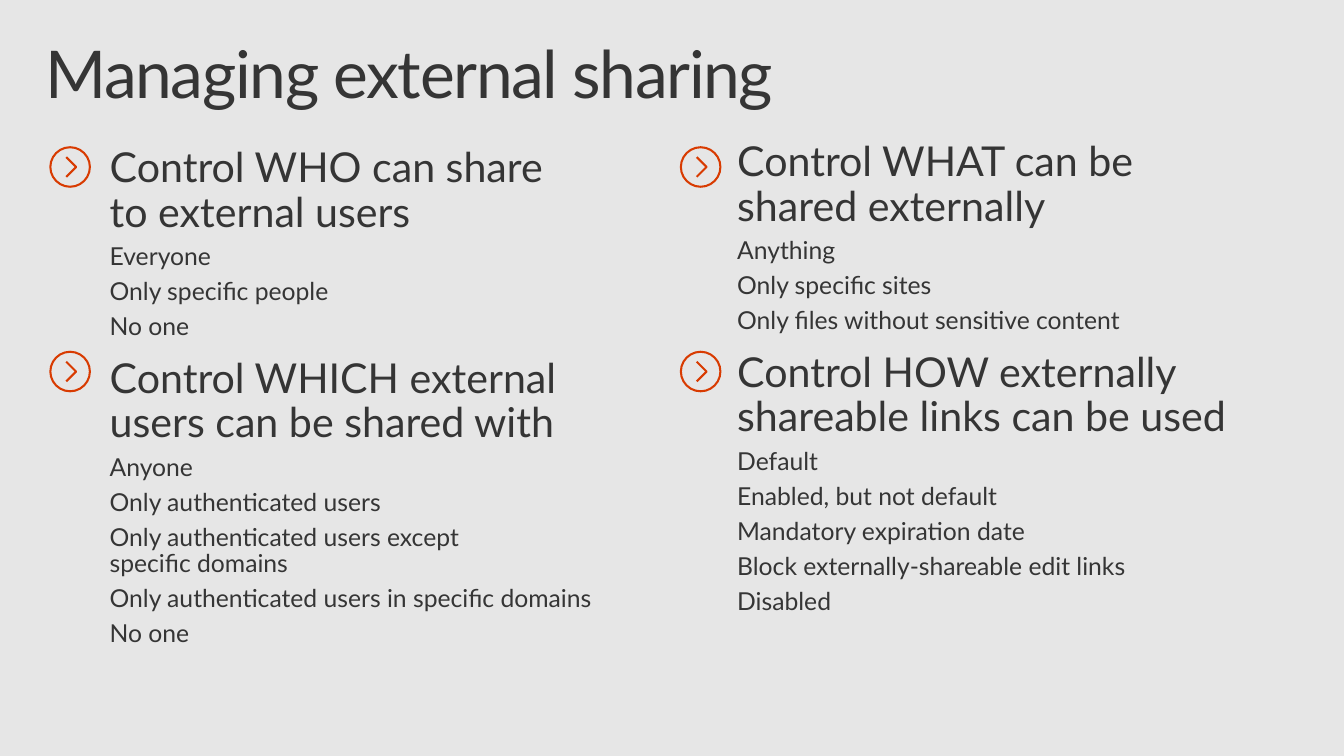
from pptx import Presentation
from pptx.dml.color import RGBColor
from pptx.enum.shapes import MSO_SHAPE
from pptx.enum.text import MSO_ANCHOR
from pptx.util import Inches, Pt

BACKGROUND = RGBColor(0xE6, 0xE6, 0xE6)
INK = RGBColor(0x35, 0x35, 0x35)
ACCENT = RGBColor(0xD8, 0x3B, 0x01)

WHO_AND_WHICH = [
    ("Control WHO can share\nto external users",
     ["Everyone", "Only specific people", "No one"]),
    ("Control WHICH external users can be shared with",
     ["Anyone", "Only authenticated users",
      "Only authenticated users except\nspecific domains",
      "Only authenticated users in specific domains", "No one"]),
]
WHAT_AND_HOW = [
    ("Control WHAT can be\nshared externally",
     ["Anything", "Only specific sites", "Only files without sensitive content"]),
    ("Control HOW externally shareable links can be used",
     ["Default", "Enabled, but not default", "Mandatory expiration date",
      "Block externally-shareable edit links", "Disabled"]),
]


class SharingSlide:
    font_name = "Lato"
    title_size, heading_size, option_size = 48, 30, 18
    icon_size = 0.4

    def __init__(self, deck):
        self.page = deck.slides.add_slide(deck.slide_layouts[6])
        self.page.background.fill.solid()
        self.page.background.fill.fore_color.rgb = BACKGROUND

    def text_frame(self, left, top, width, height, inset_x=0.16, inset_y=0.1):
        box = self.page.shapes.add_textbox(
            Inches(left), Inches(top), Inches(width), Inches(height))
        frame = box.text_frame
        frame.word_wrap = True
        frame.vertical_anchor = MSO_ANCHOR.TOP
        frame.margin_left = frame.margin_right = Inches(inset_x)
        frame.margin_top = frame.margin_bottom = Inches(inset_y)
        return frame

    def paragraph(self, frame, text, size, space_before=0, level=0):
        """Fill the empty first paragraph, or add one below the others."""
        para = frame.paragraphs[0]
        if para.runs:
            para = frame.add_paragraph()
            para.space_before = Pt(space_before)
        para.level = level
        properties = para._p.get_or_add_pPr()
        properties.set("marL", "0")
        properties.set("indent", "0")
        para.line_spacing = 0.9
        for number, line in enumerate(text.split("\n")):
            if number:
                para.add_line_break()
            span = para.add_run()
            span.text = line
            span.font.name = self.font_name
            span.font.size = Pt(size)
            span.font.color.rgb = INK
        return para

    def title(self, text):
        frame = self.text_frame(0.3, 0.32, 13, 1)
        para = self.paragraph(frame, text, self.title_size)
        for span in para.runs:
            span.font._element.set("spc", "-100")

    def column(self, frame, topics):
        for heading, options in topics:
            self.paragraph(frame, heading, self.heading_size, space_before=12.2)
            for option in options:
                self.paragraph(frame, option, self.option_size, space_before=6, level=1)

    def outline(self, shape):
        shape.shadow.inherit = False
        shape.fill.background()
        shape.line.color.rgb = ACCENT
        shape.line.width = Pt(1.5)

    def arrow_icon(self, left, top):
        size = Inches(self.icon_size)
        self.outline(self.page.shapes.add_shape(
            MSO_SHAPE.OVAL, Inches(left), Inches(top), size, size))
        chevron = self.page.shapes.build_freeform(
            Inches(left + 0.16), Inches(top + 0.1))
        chevron.add_line_segments(
            [(Inches(left + 0.26), Inches(top + 0.2)),
             (Inches(left + 0.16), Inches(top + 0.3))], close=False)
        self.outline(chevron.convert_to_shape())


def main():
    deck = Presentation()
    deck.slide_width, deck.slide_height = Inches(13.6), Inches(7.65)
    slide = SharingSlide(deck)
    slide.title("Managing external sharing")
    slide.column(slide.text_frame(0.91, 1.33, 5.58, 5.54, 0.2, 0.16), WHO_AND_WHICH)
    slide.column(slide.text_frame(7.3, 1.33, 6, 5.78), WHAT_AND_HOW)
    for left in (0.51, 6.89):
        for top in (1.49, 3.56):
            slide.arrow_icon(left, top)
    deck.save("out.pptx")


if __name__ == "__main__":
    main()
